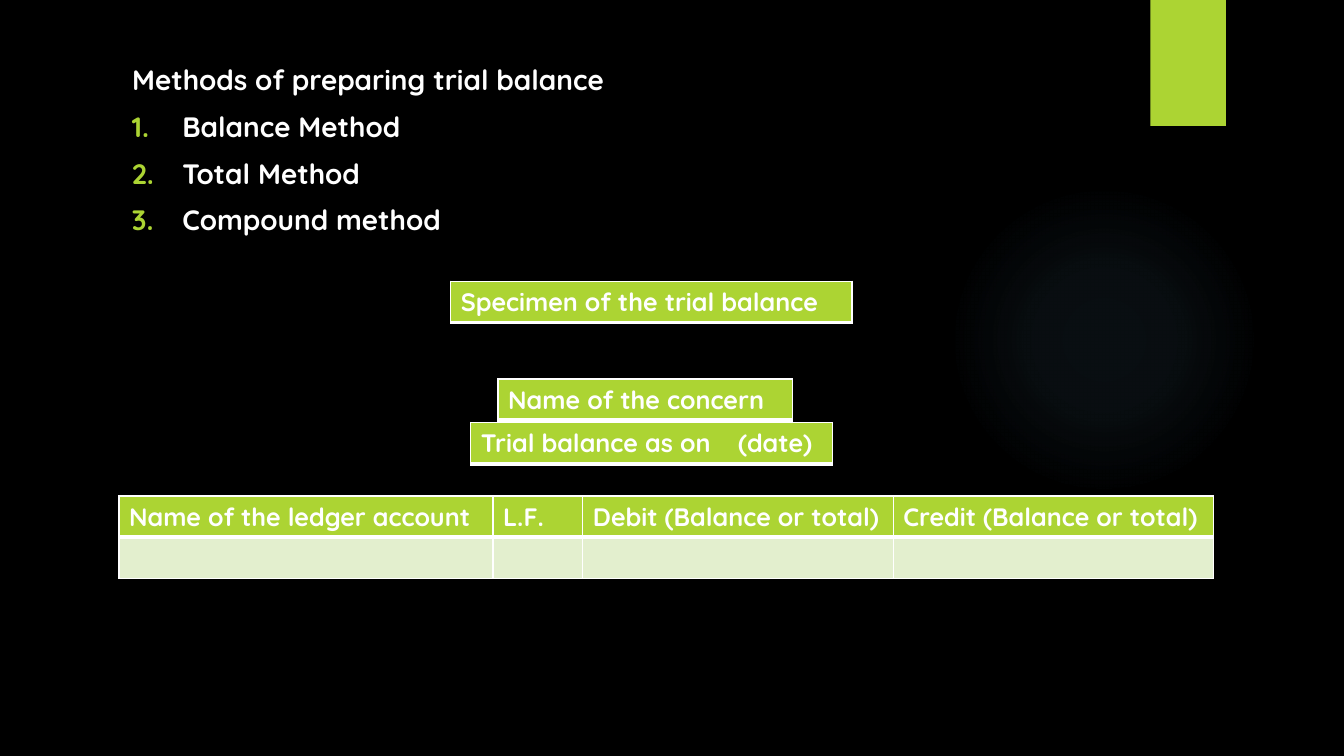
"""Build the slide on methods of preparing a trial balance."""
from dataclasses import dataclass

from lxml.etree import SubElement
from pptx import Presentation
from pptx.dml.color import RGBColor
from pptx.enum.shapes import MSO_SHAPE
from pptx.enum.text import MSO_ANCHOR, PP_ALIGN
from pptx.oxml import parse_xml
from pptx.oxml.ns import nsdecls, qn
from pptx.slide import Slide
from pptx.util import Inches, Pt

BLACK = RGBColor(0x00, 0x00, 0x00)
WHITE = RGBColor(0xFF, 0xFF, 0xFF)
LIME = RGBColor(0xAC, 0xD4, 0x33)
PALE_LIME = RGBColor(0xE3, 0xEF, 0xCE)
GLOW_BLUE = RGBColor(0x7A, 0xC4, 0xF0)
FONT = "Quicksand"
ROW_HEIGHT = 0.41


@dataclass(frozen=True)
class LedgerTable:
    """Place, column widths and header of a table with optional empty rows."""

    left: float
    top: float
    widths: tuple[float, ...]
    headers: tuple[str, ...]
    empty_rows: int = 0
    tab_stop: float = 0


METHODS = ("Balance Method", "Total Method", "Compound method")
TABLES = (
    LedgerTable(4.47, 2.79, (3.98,), ("Specimen of the trial balance",)),
    LedgerTable(4.94, 3.76, (2.92,), ("Name of the concern",)),
    LedgerTable(
        1.18, 4.92, (3.71, 0.89, 3.08, 3.18),
        ("Name of the ledger account", "L.F.",
         "Debit (Balance or total)", "Credit (Balance or total)"),
        empty_rows=1,
    ),
    LedgerTable(4.67, 4.19, (3.59,), ("Trial balance as on\t(date)",), tab_stop=2.55),
)


def add_text(p, text: str, size: int) -> None:
    """Add a bold white run to a paragraph."""
    r = p.add_run()
    r.text = text
    r.font.name = FONT
    r.font.size = Pt(size)
    r.font.bold = True
    r.font.color.rgb = WHITE


def add_decor(s: Slide) -> None:
    """Draw the faint glow and the lime tab."""
    glow = s.shapes.add_shape(
        MSO_SHAPE.OVAL, Inches(9.41), Inches(1.83), Inches(3.08), Inches(3.08))
    tab = s.shapes.add_shape(
        MSO_SHAPE.RECTANGLE, Inches(11.41), 0, Inches(0.75), Inches(1.25))
    for sp in (glow, tab):
        sp.shadow.inherit = False
        sp.line.fill.background()
    tab.fill.solid()
    tab.fill.fore_color.rgb = LIME
    stops = "".join(
        f'<a:gs pos="{pos * 1000}"><a:srgbClr val="{GLOW_BLUE}">'
        f'<a:alpha val="{alpha * 1000}"/></a:srgbClr></a:gs>'
        for pos, alpha in ((0, 7), (36, 6), (69, 0), (100, 0)))
    gradient = parse_xml(
        f'<a:gradFill {nsdecls("a")} rotWithShape="1"><a:gsLst>{stops}</a:gsLst>'
        '<a:path path="circle"><a:fillToRect l="50000" t="50000" r="50000" b="50000"/>'
        '</a:path></a:gradFill>')
    glow.element.spPr.find(qn("a:prstGeom")).addnext(gradient)


def add_heading(s: Slide) -> None:
    """Fill the title placeholder."""
    title = s.shapes.title
    title.left, title.top = Inches(1.21), Inches(0.57)
    title.width, title.height = Inches(9.78), Inches(0.45)
    tf = title.text_frame
    tf.word_wrap = True
    tf.vertical_anchor = MSO_ANCHOR.TOP
    p = tf.paragraphs[0]
    p.alignment = PP_ALIGN.LEFT
    p.line_spacing = 1.0
    p.space_before = Pt(0)
    add_text(p, "Methods of preparing trial balance", 20)


def add_methods(s: Slide) -> None:
    """Write the numbered list of methods."""
    box = s.shapes.add_textbox(Inches(1.21), Inches(1.04), Inches(9.78), Inches(1.4))
    tf = box.text_frame
    tf.word_wrap = True
    for i, method in enumerate(METHODS):
        p = tf.paragraphs[0] if i == 0 else tf.add_paragraph()
        pPr = p._p.get_or_add_pPr()
        pPr.set("marL", str(Inches(0.5)))
        pPr.set("indent", str(-Inches(0.5)))
        color = SubElement(pPr, qn("a:buClr"))
        SubElement(color, qn("a:srgbClr"), val=str(LIME))
        SubElement(pPr, qn("a:buFont"), typeface=FONT)
        SubElement(pPr, qn("a:buAutoNum"), type="arabicPeriod")
        if i:
            p.space_before = Pt(9)
        add_text(p, method, 20)


def style_cell(cell, fill: RGBColor, top: int, bottom: int) -> None:
    """Give a cell white borders and a solid fill."""
    tcPr = cell._tc.get_or_add_tcPr()
    for side, width in (("L", 1), ("R", 1), ("T", top), ("B", bottom)):
        line = SubElement(tcPr, qn(f"a:ln{side}"), w=str(Pt(width)))
        solid = SubElement(line, qn("a:solidFill"))
        SubElement(solid, qn("a:srgbClr"), val=str(WHITE))
    cell.fill.solid()
    cell.fill.fore_color.rgb = fill


def add_ledger_table(s: Slide, spec_table: LedgerTable) -> None:
    """Draw one table with its header and empty rows."""
    rows = 1 + spec_table.empty_rows
    table = s.shapes.add_table(
        rows, len(spec_table.widths), Inches(spec_table.left), Inches(spec_table.top),
        Inches(sum(spec_table.widths)), Inches(ROW_HEIGHT * rows)).table
    table.horz_banding = False
    for row in table.rows:
        row.height = Inches(ROW_HEIGHT)
    for col, (width, header) in enumerate(zip(spec_table.widths, spec_table.headers)):
        table.columns[col].width = Inches(width)
        cell = table.cell(0, col)
        style_cell(cell, LIME, 1, 3)
        p = cell.text_frame.paragraphs[0]
        if spec_table.tab_stop:
            tabs = SubElement(p._p.get_or_add_pPr(), qn("a:tabLst"))
            SubElement(tabs, qn("a:tab"), pos=str(Inches(spec_table.tab_stop)), algn="l")
        add_text(p, header, 18)
        for row in range(1, rows):
            style_cell(table.cell(row, col), PALE_LIME, 3 if row == 1 else 1, 1)


def main() -> None:
    """Assemble and save the slide."""
    prs = Presentation()
    prs.slide_width, prs.slide_height = Inches(13.33), Inches(7.5)
    s = prs.slides.add_slide(prs.slide_layouts[5])
    s.background.fill.solid()
    s.background.fill.fore_color.rgb = BLACK
    add_decor(s)
    add_heading(s)
    add_methods(s)
    for ledger_table in TABLES:
        add_ledger_table(s, ledger_table)
    prs.save("out.pptx")


if __name__ == "__main__":
    main()
